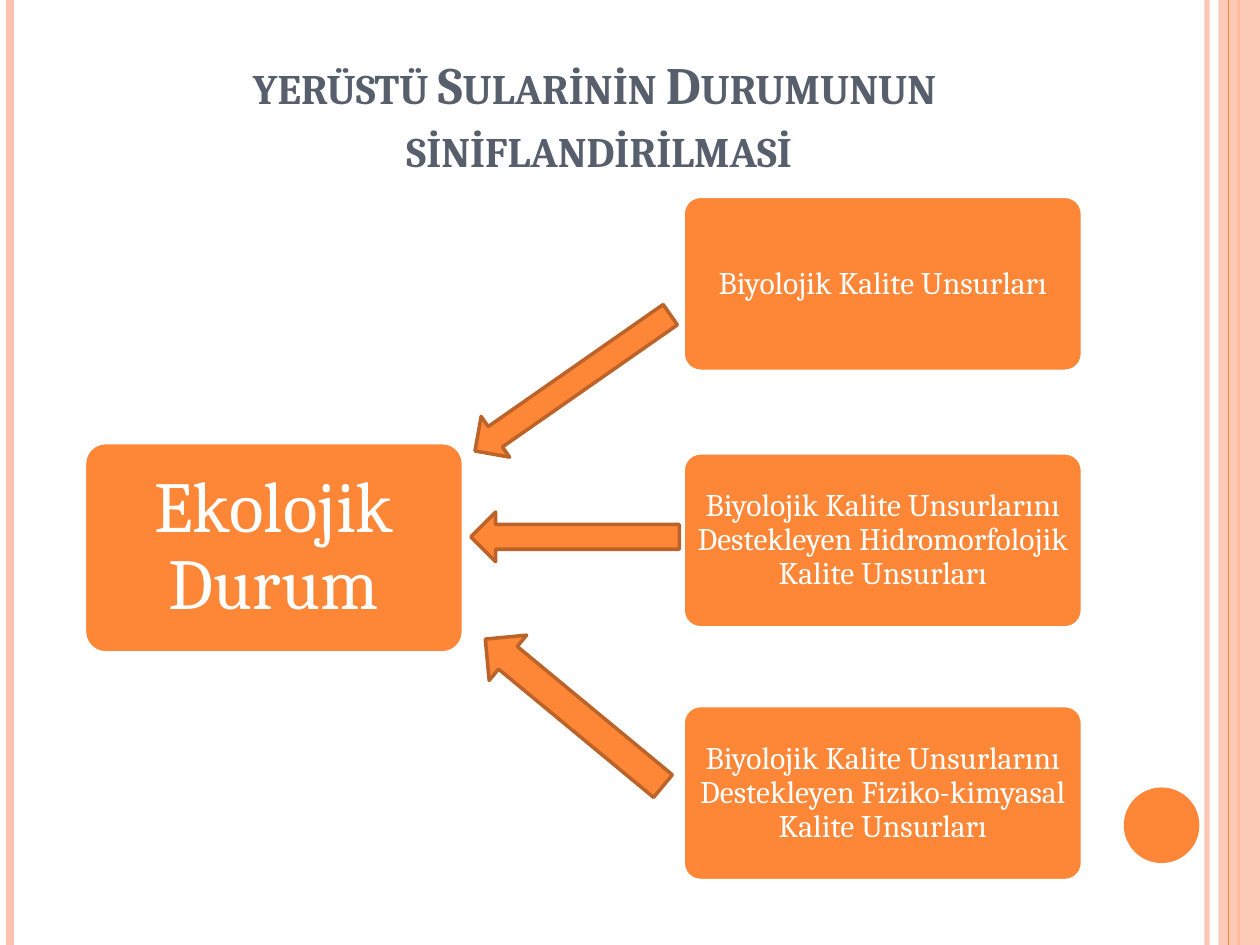
"""Build a slide on how the status of surface waters is classified."""
from lxml.etree import SubElement
from pptx import Presentation
from pptx.dml.color import RGBColor
from pptx.enum.lang import MSO_LANGUAGE_ID as LANG
from pptx.enum.shapes import MSO_CONNECTOR as CONN, MSO_SHAPE as SHAPE
from pptx.enum.text import MSO_ANCHOR as ANCHOR, MSO_AUTO_SIZE as FIT, PP_ALIGN as ALIGN
from pptx.oxml.ns import qn
from pptx.util import Pt

THEME = dict(font="Cambria", orange="FE8637", pale="FEC3AE", edge="BC6329",
             white="FFFFFF", slate="575F6D", title=30, status=41, element=18)
WIDTH, HEIGHT = 720, 540
TITLE = ["yerüstü Sularinin Durumunun ", "siniflandirilmasi"]
TITLE_BOX = (48.24, 15.12, 588.24, 90)
STATUS = ("Ekolojik Durum", (48.24, 252.9, 216.6, 120.2))
ELEMENTS = [
    ("Biyolojik Kalite Unsurları", 112.2),
    ("Biyolojik Kalite Unsurlarını Destekleyen Hidromorfolojik Kalite Unsurları", 258.8),
    ("Biyolojik Kalite Unsurlarını Destekleyen Fiziko-kimyasal Kalite Unsurları", 403.2),
]
ELEMENT_LEFT, ELEMENT_SIZE = 390.4, (228.2, 100)
ARROWS = [((259.2, 204.6, 136.1, 28.4), 325.1),
          ((269, 292.6, 119.2, 28.4), 0),
          ((262.2, 390.4, 131.8, 33.6), 39.6)]
RULES = [(689.8, "pale", 3, 93), (5.9, "pale", 4.5, 100), (707.8, "orange", 1.5, 100)]
INNER_RULE = (702, "orange", 0.75, 100)
BAND = (696.2, 0, 23.8, HEIGHT)
DOT = (642.2, 450, 43.2, 43.2)


def color(name):
    return RGBColor.from_string(THEME[name])


def assign(target, values):
    for name, value in values.items():
        setattr(target, name, value)


def paint(fill, name, alpha=100):
    fill.solid()
    fill.fore_color.rgb = color(name)
    if alpha < 100:
        clr = next(fill._xPr.iter(qn("a:srgbClr")))
        SubElement(clr, qn("a:alpha")).set("val", str(alpha * 1000))


def add_rule(s, x, name, width, alpha):
    sp = s.shapes.add_connector(CONN.STRAIGHT, Pt(x), 0, Pt(x), Pt(HEIGHT))
    paint(sp.line.fill, name, alpha)
    sp.line.width = Pt(width)
    SubElement(sp._element.spPr, qn("a:effectLst"))


def add_shape(s, kind, box, fill="orange", line=None, alpha=100):
    sp = s.shapes.add_shape(kind, *map(Pt, box))
    sp.shadow.inherit = False
    paint(sp.fill, fill, alpha)
    if line:
        paint(sp.line.fill, line)
        sp.line.width = Pt(2)
    else:
        sp.line.fill.background()
    return sp


def style_font(font, size, name, **extra):
    assign(font, dict(name=THEME["font"], size=Pt(THEME[size]), **extra))
    font.color.rgb = color(name)


def add_box(s, text, box, size, inset):
    sp = add_shape(s, SHAPE.ROUNDED_RECTANGLE, box, line="white")
    sp.adjustments[0] = 0.1
    tf = sp.text_frame
    sides = ("margin_left", "margin_top", "margin_right", "margin_bottom")
    assign(tf, dict.fromkeys(sides, Pt(inset)))
    assign(tf, dict(word_wrap=True, vertical_anchor=ANCHOR.MIDDLE))
    p = tf.paragraphs[0]
    assign(p, dict(alignment=ALIGN.CENTER, line_spacing=0.9))
    r = p.add_run()
    r.text = text
    style_font(r.font, size, "white", language_id=LANG.TURKISH)


def add_title(s):
    sp = s.shapes.title
    assign(sp, dict(zip(("left", "top", "width", "height"), map(Pt, TITLE_BOX))))
    tf = sp.text_frame
    assign(tf, dict(word_wrap=True, auto_size=FIT.NONE, vertical_anchor=ANCHOR.BOTTOM))
    p = tf.paragraphs[0]
    p.alignment = ALIGN.CENTER
    for i, text in enumerate(TITLE):
        if i:
            p.add_line_break()
        r = p.add_run()
        r.text = text
        style_font(r.font, "title", "slate", bold=True, language_id=LANG.TURKISH)
        r._r.get_or_add_rPr().set("cap", "small")
    for br in p._p.findall(qn("a:br")):
        SubElement(br, qn("a:rPr")).set("sz", str(THEME["title"] * 100))


def main():
    prs = Presentation()
    assign(prs, dict(slide_width=Pt(WIDTH), slide_height=Pt(HEIGHT)))
    s = prs.slides.add_slide(prs.slide_layouts[5])
    for rule in RULES:
        add_rule(s, *rule)
    add_shape(s, SHAPE.RECTANGLE, BAND, "pale", alpha=87)
    add_rule(s, *INNER_RULE)
    add_shape(s, SHAPE.OVAL, DOT)
    add_title(s)
    for text, top in ELEMENTS:
        add_box(s, text, (ELEMENT_LEFT, top, *ELEMENT_SIZE), "element", 5)
    add_box(s, *STATUS, "status", 12)
    for box, angle in ARROWS:
        add_shape(s, SHAPE.LEFT_ARROW, box, line="edge").rotation = angle
    prs.save("out.pptx")


if __name__ == "__main__":
    main()
